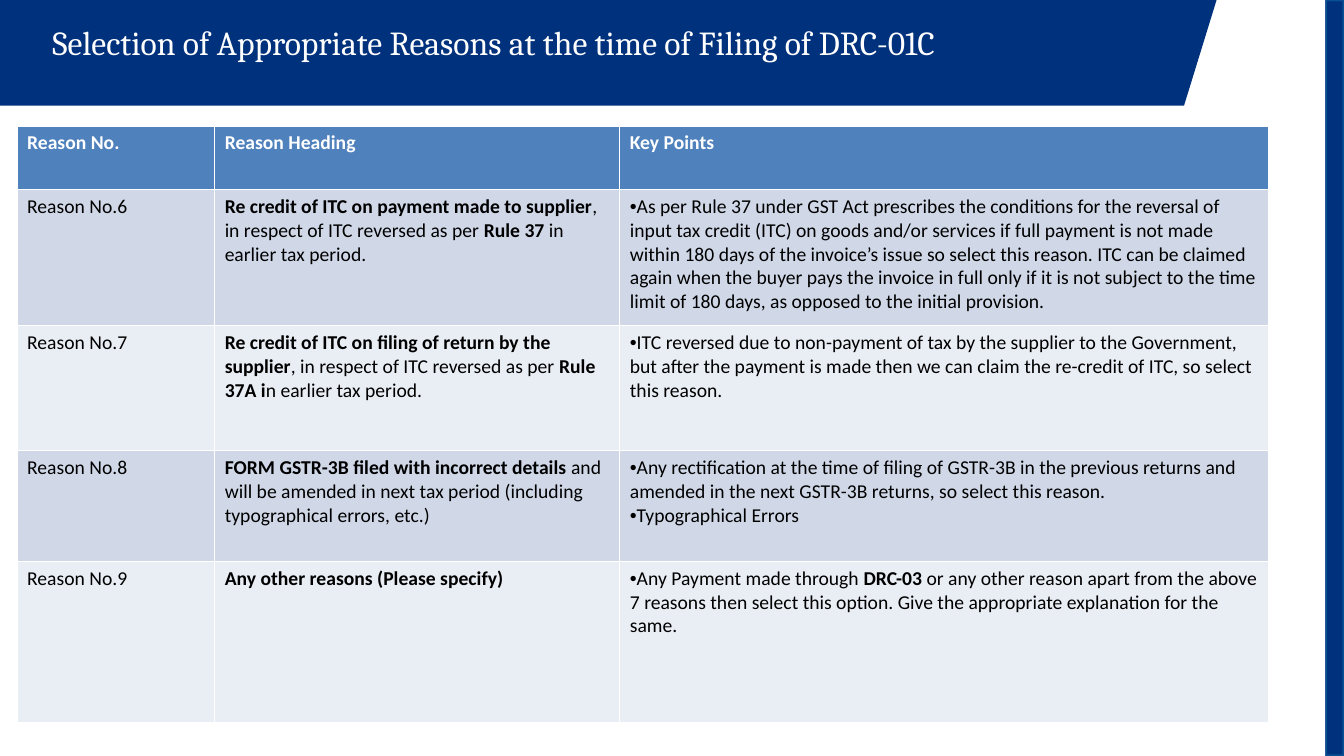
from lxml import etree
from pptx import Presentation
from pptx import util as u
from pptx.dml.color import RGBColor
from pptx.enum import shapes, text
from pptx.oxml.ns import qn

NAVY = RGBColor(0x00, 0x31, 0x7C)
EDGE_BLUE = RGBColor(0x08, 0x50, 0x91)
HEADER_BLUE = RGBColor(0x4F, 0x81, 0xBD)
BAND_DARK = RGBColor(0xD0, 0xD8, 0xE8)
BAND_LIGHT = RGBColor(0xE9, 0xED, 0xF4)
WHITE = RGBColor(0xFF, 0xFF, 0xFF)
BLACK = RGBColor(0x00, 0x00, 0x00)

TITLE = "Selection of Appropriate Reasons at the time of Filing of DRC-01C"
HEADINGS = ["Reason No.", "Reason Heading", "Key Points"]
COLUMN_WIDTHS = [4.98, 10.21, 16.36]
ROW_HEIGHTS = [1.6, 3.43, 3.15, 2.79, 4.06]
REASONS = [
    ("Reason No.6",
     [("Re credit of ITC on payment made to supplier", True),
      (", in respect of ITC reversed as per ", False),
      ("Rule 37", True), (" in earlier tax period.", False)],
     [[("As per Rule 37 under GST Act prescribes the conditions for the reversal of "
        "input tax credit (ITC) on goods and/or services if full payment is not made "
        "within 180 days of the invoice’s issue so select this reason. ITC can be claimed "
        "again when the buyer pays the invoice in full only if it is not subject to the "
        "time limit of 180 days, as opposed to the initial provision.", False)]]),
    ("Reason No.7",
     [("Re credit of ITC on filing of return by the supplier", True),
      (", in respect of ITC reversed as per ", False),
      ("Rule 37A i", True), ("n earlier tax period.", False)],
     [[("ITC reversed due to non-payment of tax by the supplier to the Government, "
        "but after the payment is made then we can claim the re-credit of ITC, "
        "so select this reason.", False)]]),
    ("Reason No.8",
     [("FORM GSTR-3B filed with incorrect details ", True),
      ("and will be amended in next tax period (including typographical errors, etc.)",
       False)],
     [[("Any rectification at the time of filing of GSTR-3B in the previous returns and "
        "amended in the next GSTR-3B returns, so select this reason.", False)],
      [("Typographical Errors", False)]]),
    ("Reason No.9",
     [("Any other reasons (Please specify)", True)],
     [[("Any Payment made through ", False), ("DRC-03 ", True),
       ("or any other reason apart from the above 7 reasons then select this option. "
        "Give the appropriate explanation for the same.", False)]]),
]


def paint(shape, color):
    """Give a shape a plain fill without line or shadow."""
    shape.fill.solid()
    shape.fill.fore_color.rgb = color
    shape.line.fill.background()
    shape.shadow.inherit = False


def add_run(paragraph, words, size, font, color, bold=False):
    """Append one formatted run to a paragraph."""
    run = paragraph.add_run()
    run.text = words
    run.font.size = u.Pt(size)
    run.font.name = font
    run.font.color.rgb = color
    run.font.bold = bold


def add_bullet(paragraph):
    """Put a bullet directly before the paragraph's text."""
    properties = paragraph._p.get_or_add_pPr()
    properties.set("marL", "0")
    properties.set("indent", "0")
    etree.SubElement(properties, qn("a:buFont")).set("typeface", "Arial")
    etree.SubElement(properties, qn("a:buChar")).set("char", "•")


def add_title_banner(slide, left, top, width, height):
    """Draw the slanted banner and its title."""
    right, bottom = left + width, top + height
    builder = slide.shapes.build_freeform(left, top)
    builder.add_line_segments(
        [(right, top), (right - u.Cm(0.82), bottom), (left, bottom)], close=True)
    paint(builder.convert_to_shape(), NAVY)
    box = slide.shapes.add_textbox(
        left + u.Cm(1.07), top + u.Cm(0.43), u.Cm(24.13), u.Cm(1.28))
    frame = box.text_frame
    frame.word_wrap = True
    frame.auto_size = text.MSO_AUTO_SIZE.SHAPE_TO_FIT_TEXT
    add_run(frame.paragraphs[0], TITLE, 24, "Cambria", WHITE)


def add_side_bar(slide, left, top, width, height):
    """Draw the vertical bar with its thin edge."""
    bar = slide.shapes.add_shape(shapes.MSO_SHAPE.RECTANGLE, left, top, width, height)
    paint(bar, NAVY)
    edge = slide.shapes.add_shape(shapes.MSO_SHAPE.FRAME, left, top, width, height)
    edge.adjustments[0] = 0.08
    paint(edge, EDGE_BLUE)


def fill_cell(cell, paragraphs, fill, color, bulleted=False):
    """Write paragraphs of (words, bold) runs into a table cell."""
    cell.fill.solid()
    cell.fill.fore_color.rgb = fill
    frame = cell.text_frame
    for index, runs in enumerate(paragraphs):
        paragraph = frame.add_paragraph() if index else frame.paragraphs[0]
        if bulleted:
            add_bullet(paragraph)
        for words, bold in runs:
            add_run(paragraph, words, 14, "Calibri", color, bold)


def add_reason_table(slide, left, top, width, height):
    """Draw the table of reasons and their key points."""
    table = slide.shapes.add_table(
        len(ROW_HEIGHTS), len(COLUMN_WIDTHS), left, top, width, height).table
    for column, size in zip(table.columns, COLUMN_WIDTHS):
        column.width = u.Cm(size)
    for row, size in zip(table.rows, ROW_HEIGHTS):
        row.height = u.Cm(size)
    for index, heading in enumerate(HEADINGS):
        fill_cell(table.cell(0, index), [[(heading, True)]], HEADER_BLUE, WHITE)
    for index, (number, heading, points) in enumerate(REASONS, start=1):
        band = BAND_DARK if index % 2 else BAND_LIGHT
        fill_cell(table.cell(index, 0), [[(number, False)]], band, BLACK)
        fill_cell(table.cell(index, 1), [heading], band, BLACK)
        fill_cell(table.cell(index, 2), points, band, BLACK, bulleted=True)


def main():
    """Build and save the slide."""
    presentation = Presentation()
    presentation.slide_width = u.Cm(33.87)
    presentation.slide_height = u.Cm(19.05)
    slide = presentation.slides.add_slide(presentation.slide_layouts[6])
    add_title_banner(slide, u.Cm(0), u.Cm(0), u.Cm(30.66), u.Cm(2.66))
    add_side_bar(slide, u.Cm(33.4), u.Cm(0), u.Cm(0.47), presentation.slide_height)
    add_reason_table(slide, u.Cm(0.43), u.Cm(3.18),
                     u.Cm(sum(COLUMN_WIDTHS)), u.Cm(sum(ROW_HEIGHTS)))
    presentation.save("out.pptx")


if __name__ == "__main__":
    main()
